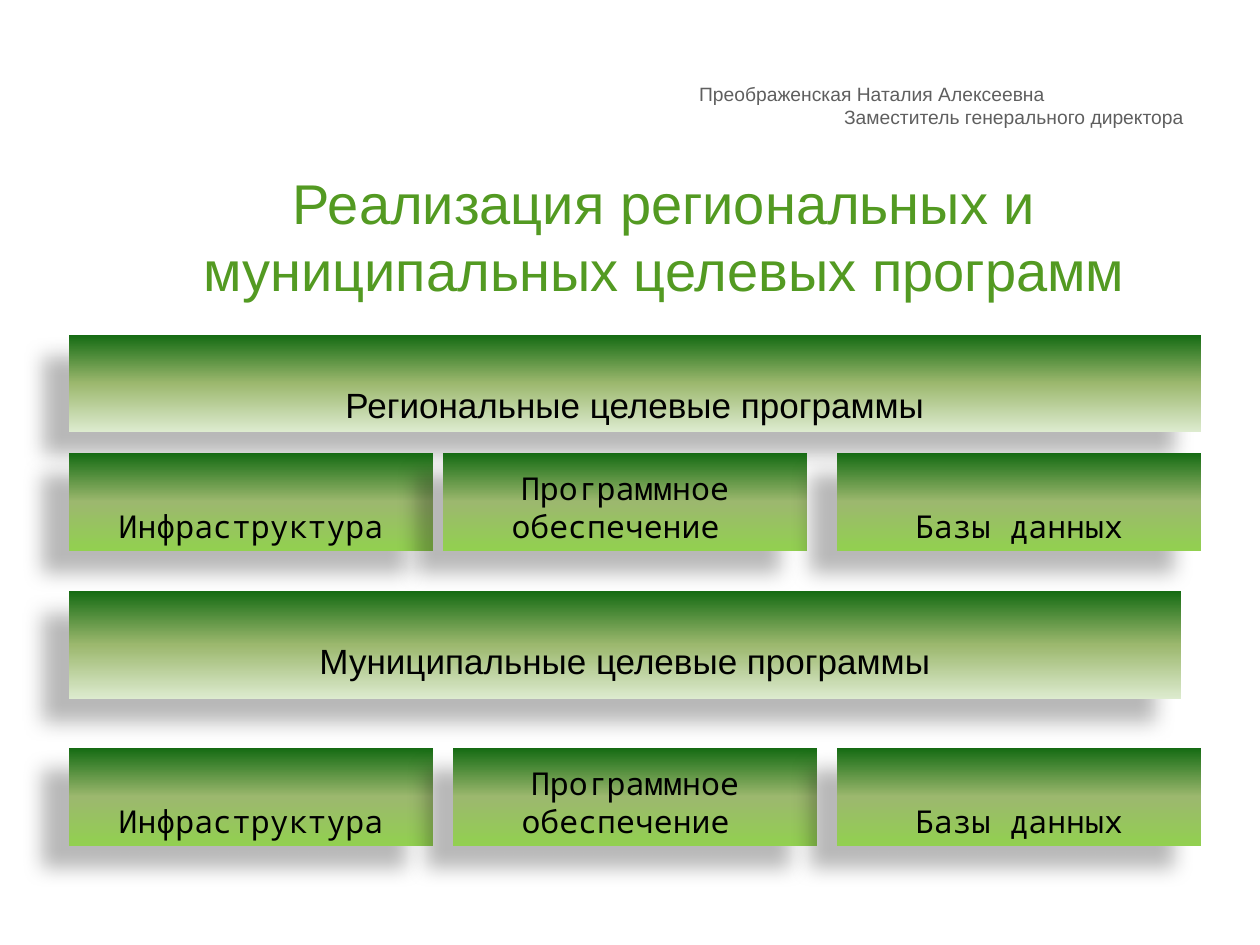
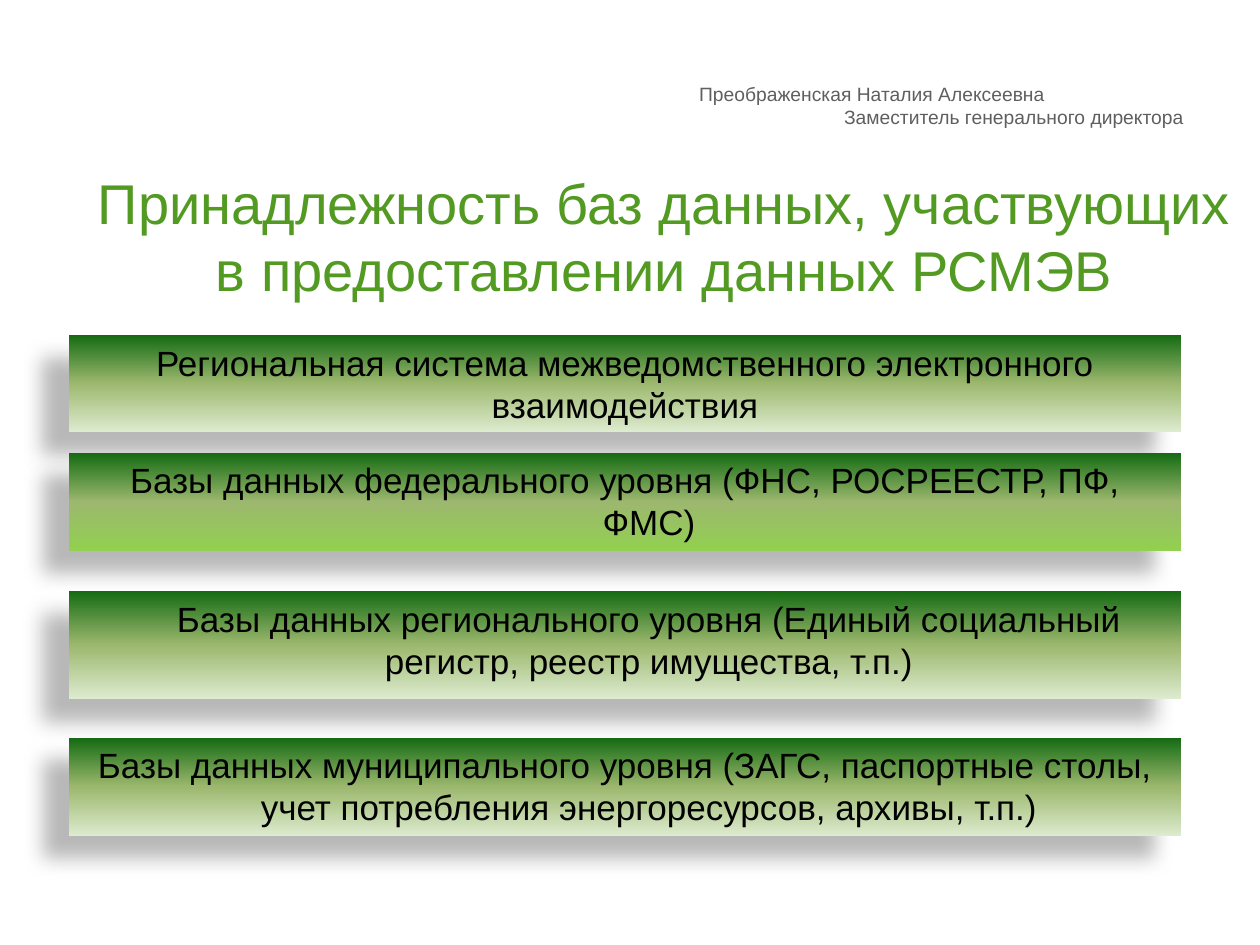
from lxml import etree
from pptx import Presentation
from pptx.dml.color import RGBColor
from pptx.enum.shapes import MSO_SHAPE
from pptx.enum.text import MSO_ANCHOR as ANCHOR, PP_ALIGN as ALIGN
from pptx.oxml import parse_xml
from pptx.oxml.ns import nsdecls, qn
from pptx.util import Pt

PX = 914400 / 126  # EMU in one px
COLORS = {
    "title": "539A22", "author": "5F5F5F", "text": "000000", "shadow": "000000",
    "pale": "DDEBCF", "lime": "92D050", "olive": "9CB86E", "forest": "156B13",
}
SANS, MONO = "Arial", "Noto Sans Mono"
INDENT = 48
LEFT, BAND_W, WIDE_BAND_W = 69, 1112, 1132
TILE_W, ROW_H, TALL_ROW_H = 364, 98, 108
TILES = ["Инфраструктура", "Программное\nобеспечение ", "Базы данных"]


def px(n):
    return round(n * PX)


def set_text(sp, text, size, color, font=SANS, align=ALIGN.CENTER,
             anchor=ANCHOR.TOP, bottom=6):
    """Fill a shape with evenly formatted paragraphs."""
    tf = sp.text_frame
    tf.word_wrap = True
    tf.vertical_anchor = anchor
    tf.margin_left = tf.margin_right = px(13)
    tf.margin_top, tf.margin_bottom = px(6), px(bottom)
    tf.text = text
    for p in tf.paragraphs:
        p.alignment = align
        for r in p.runs:
            r.font.size = Pt(size)
            r.font.name = font
            r.font.color.rgb = RGBColor.from_string(COLORS[color])
    return tf


def indent(p, left, first=0):
    pPr = p._p.get_or_add_pPr()
    pPr.set("marL", str(px(left)))
    pPr.set("indent", str(px(first)))


def add_text_box(slide, box, *args, **kwargs):
    sp = slide.shapes.add_textbox(*map(px, box))
    return set_text(sp, *args, **kwargs)


def add_block(slide, box, base):
    """Rectangle with an upward gradient and a shadow to the lower left."""
    sp = slide.shapes.add_shape(MSO_SHAPE.RECTANGLE, *map(px, box))
    sp.line.fill.background()
    sp.shadow.inherit = False
    spPr = sp._element.spPr
    stops = "".join(
        f'<a:gs pos="{pos}"><a:srgbClr val="{COLORS[name]}"/></a:gs>'
        for pos, name in ((0, base), (50000, "olive"), (100000, "forest")))
    spPr.find(qn("a:prstGeom")).addnext(parse_xml(
        f'<a:gradFill {nsdecls("a")} rotWithShape="1"><a:gsLst>{stops}</a:gsLst>'
        '<a:lin ang="16200000" scaled="0"/></a:gradFill>'))
    shadow = etree.SubElement(
        spPr.find(qn("a:effectLst")), qn("a:outerShdw"), blurRad=str(Pt(11.8)),
        dist=str(Pt(19.7)), dir=str(141 * 60000), algn="ctr", rotWithShape="0")
    color = etree.SubElement(shadow, qn("a:srgbClr"), val=COLORS["shadow"])
    etree.SubElement(color, qn("a:alpha"), val="28000")
    return sp


def add_band(slide, box, text, base="pale", **kwargs):
    sp = add_block(slide, box, base)
    return set_text(sp, text, 20, "text", **kwargs)


def add_tile_row(slide, top, lefts):
    for left, text in zip(lefts, TILES):
        sp = add_block(slide, (left, top, TILE_W, ROW_H), "lime")
        set_text(sp, text, 18, "text", font=MONO, anchor=ANCHOR.BOTTOM)


def add_base_slide(prs, title):
    """Blank slide with the author lines and the title."""
    slide = prs.slides.add_slide(prs.slide_layouts[6])
    author = "Преображенская Наталия Алексеевна\nЗаместитель генерального директора"
    tf = add_text_box(slide, (600, 76, 597, 59), author, 11, "author",
                      align=ALIGN.RIGHT)
    name = tf.paragraphs[0]
    name.alignment = ALIGN.LEFT
    indent(name, 86)
    add_text_box(slide, (LEFT, 186, 1191, 100), title, 32, "title",
                 anchor=ANCHOR.MIDDLE)
    return slide


def programs_slide(prs):
    slide = add_base_slide(
        prs, "Реализация региональных и муниципальных целевых программ")
    add_band(slide, (LEFT, 335, WIDE_BAND_W, 97), "Региональные целевые программы",
             anchor=ANCHOR.BOTTOM)
    add_tile_row(slide, 453, (LEFT, 443, 837))
    add_band(slide, (LEFT, 591, BAND_W, TALL_ROW_H), "Муниципальные целевые программы",
             anchor=ANCHOR.BOTTOM, bottom=18)
    add_tile_row(slide, 748, (LEFT, 453, 837))


def databases_slide(prs):
    slide = add_base_slide(
        prs, "Принадлежность баз данных, участвующих в предоставлении данных РСМЭВ")
    # top, height, base colour, left indent, first-line indent, text
    bands = [
        (335, 97, "pale", 0, 0,
         "Региональная система межведомственного электронного взаимодействия"),
        (453, ROW_H, "lime", INDENT, -INDENT,
         "Базы данных федерального уровня (ФНС, РОСРЕЕСТР, ПФ, ФМС)"),
        (591, TALL_ROW_H, "pale", INDENT, 0,
         "Базы данных регионального уровня (Единый социальный регистр, "
         "реестр имущества, т.п.)"),
        (738, ROW_H, "pale", INDENT, -INDENT,
         "Базы данных муниципального уровня (ЗАГС, паспортные столы, "
         "учет потребления энергоресурсов, архивы, т.п.)"),
    ]
    for top, height, base, left, first, text in bands:
        tf = add_band(slide, (LEFT, top, BAND_W, height), text, base)
        indent(tf.paragraphs[0], left, first)


def main():
    prs = Presentation()
    prs.slide_width, prs.slide_height = px(1260), px(945)
    programs_slide(prs)
    databases_slide(prs)
    prs.save("out.pptx")


if __name__ == "__main__":
    main()
